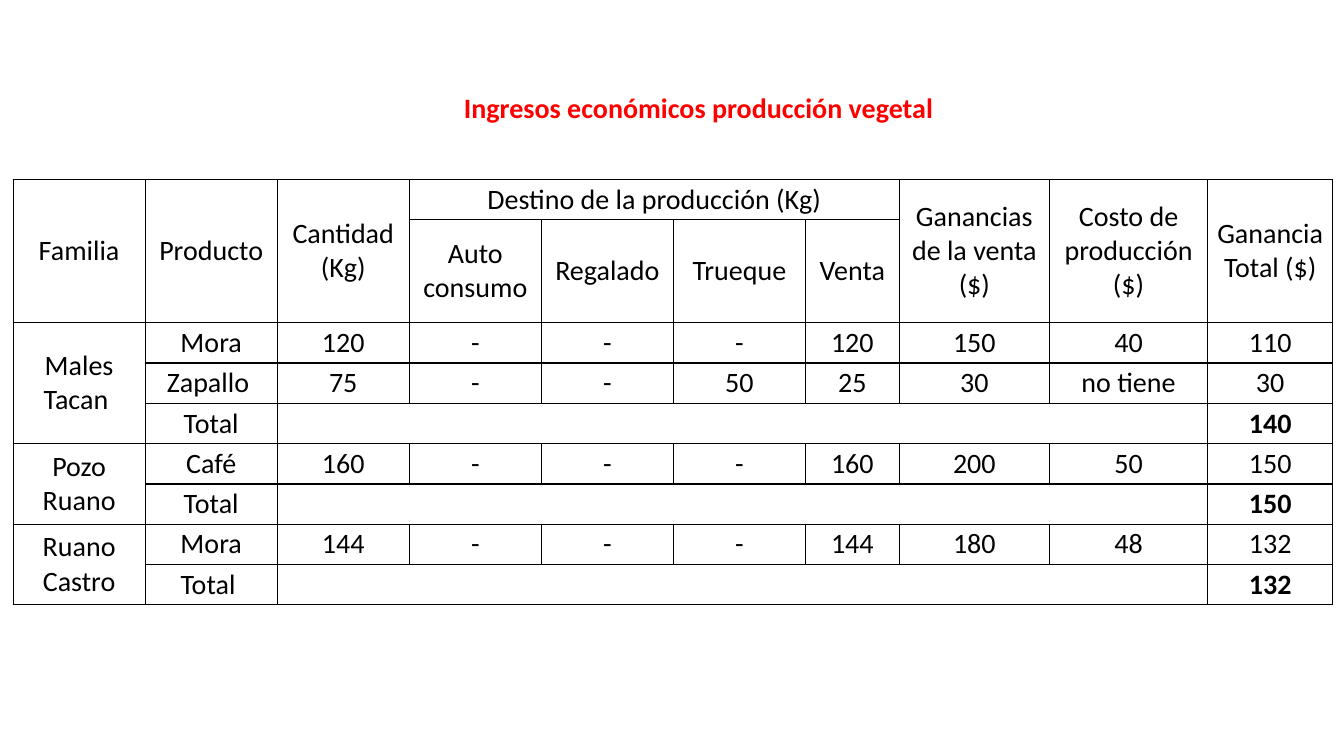
from lxml.etree import SubElement
from pptx import Presentation
from pptx.dml.color import RGBColor
from pptx.enum.text import MSO_ANCHOR as Anchor, PP_ALIGN as Align
from pptx.oxml.ns import qn
from pptx.util import Inches, Pt

FONT, TEXT_SIZE = "Calibri", 20
BLACK, RED = "000000", "FF0000"

COLUMN_WIDTHS = [1.31] * 6 + [0.93, 1.49, 1.57, 1.24]
ROW_HEIGHTS = [0.4, 0.8] + [0.4] * 7
HEADINGS = ["Familia", "Producto", "Cantidad (Kg)",
            "Destino de la producción (Kg)", "", "", "",
            "Ganancias de la venta ($)", "Costo de producción ($)",
            "Ganancia Total ($)"]
DESTINATIONS = ["Auto consumo", "Regalado", "Trueque", "Venta"]

# Family, its products, the label of its total and the total
FAMILIES = [
    ("Males Tacan ",
     [["Mora", "120", "-", "-", "-", "120", "150", "40", "110"],
      ["Zapallo ", "75", "-", "-", "50", "25", "30", "no tiene", "30"]],
     "Total", "140"),
    ("Pozo Ruano",
     [["Café", "160", "-", "-", "-", "160", "200", "50", "150"]],
     "Total", "150"),
    ("Ruano Castro",
     [["Mora", "144", "-", "-", "-", "144", "180", "48", "132"]],
     "Total ", "132"),
]


def color(value):
    return RGBColor.from_string(value)


def format_text(frame, hex_color, bold=False):
    paragraph = frame.paragraphs[0]
    paragraph.alignment = Align.CENTER
    # The paragraph font also sets the height of empty cells
    for font in [paragraph.font] + [run.font for run in paragraph.runs]:
        font.name, font.size, font.bold = FONT, Pt(TEXT_SIZE), bold
        font.color.rgb = color(hex_color)


def add_borders(cell):
    properties = cell._tc.get_or_add_tcPr()
    for side in ("lnL", "lnR", "lnT", "lnB"):
        line = SubElement(properties, qn(f"a:{side}"), w=str(Pt(1)))
        fill = SubElement(line, qn("a:solidFill"))
        SubElement(fill, qn("a:srgbClr"), val=BLACK)


def fill_cell(cell, text, bold=False):
    cell.text_frame.text = text
    cell.vertical_anchor = Anchor.MIDDLE
    cell.margin_left = cell.margin_right = Inches(0.05)
    cell.margin_top = cell.margin_bottom = 0
    format_text(cell.text_frame, BLACK, bold)
    add_borders(cell)
    cell.fill.background()


def fill_row(table, row, texts, bold_last=False):
    last = len(texts) - 1
    for column, text in enumerate(texts):
        fill_cell(table.cell(row, column), text, bold_last and column == last)


def add_title(slide, left, top, width, height):
    title = slide.shapes.title
    title.left, title.top = Inches(left), Inches(top)
    title.width, title.height = Inches(width), Inches(height)
    title.text_frame.text = "Ingresos económicos producción vegetal "
    title.text_frame.word_wrap = True
    title.text_frame.vertical_anchor = Anchor.MIDDLE
    format_text(title.text_frame, RED, bold=True)


def add_header(table):
    fill_row(table, 0, HEADINGS)
    fill_row(table, 1, [""] * 3 + DESTINATIONS + [""] * 3)
    for column in (0, 1, 2, 7, 8, 9):
        table.cell(0, column).merge(table.cell(1, column))
    table.cell(0, 3).merge(table.cell(0, 6))


def add_family(table, first, family, products, total_label, total):
    for row, product in enumerate(products, first):
        fill_row(table, row, [family if row == first else ""] + product)
    total_row = first + len(products)
    fill_row(table, total_row, ["", total_label] + [""] * 7 + [total], bold_last=True)
    table.cell(first, 0).merge(table.cell(total_row, 0))
    table.cell(total_row, 2).merge(table.cell(total_row, 8))
    return total_row + 1


def add_income_table(slide, left, top, width, height):
    table = slide.shapes.add_table(
        len(ROW_HEIGHTS), len(COLUMN_WIDTHS),
        Inches(left), Inches(top), Inches(width), Inches(height)).table
    table.first_row = table.horz_banding = False
    for column, column_width in zip(table.columns, COLUMN_WIDTHS):
        column.width = Inches(column_width)
    for row, row_height in zip(table.rows, ROW_HEIGHTS):
        row.height = Inches(row_height)
    add_header(table)
    next_row = 2
    for family in FAMILIES:
        next_row = add_family(table, next_row, *family)


def main():
    presentation = Presentation()
    presentation.slide_width = Inches(13.33)
    presentation.slide_height = Inches(7.5)
    slide = presentation.slides.add_slide(presentation.slide_layouts[5])
    add_title(slide, 4.34, 0.84, 5.24, 0.44)
    add_income_table(slide, 0.13, 1.78, 13.07, 4.02)
    presentation.save("out.pptx")


if __name__ == "__main__":
    main()
